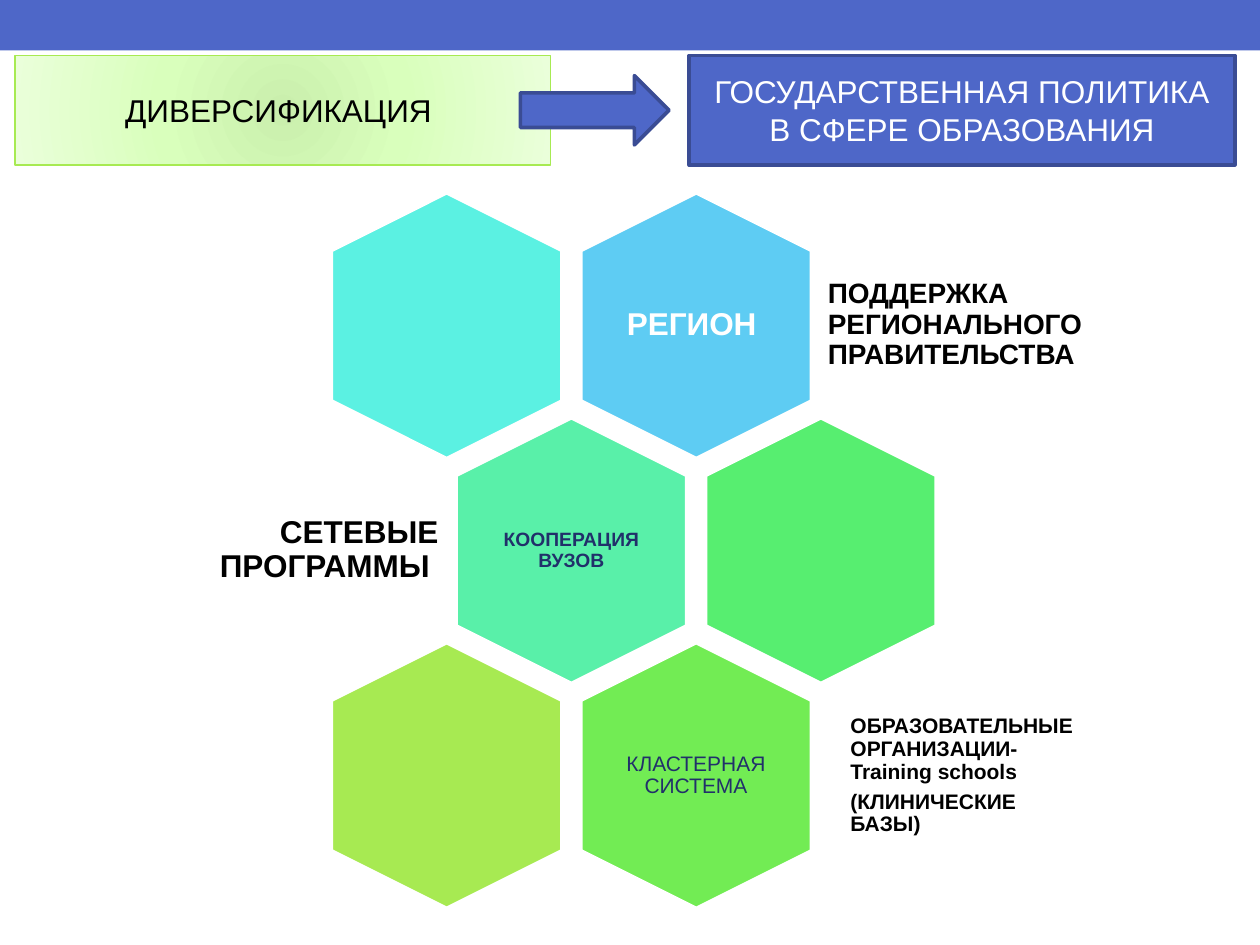
from dataclasses import dataclass
from typing import Optional

from lxml.etree import SubElement
from pptx import Presentation
from pptx.dml.color import RGBColor
from pptx.enum.shapes import MSO_SHAPE
from pptx.enum.text import MSO_ANCHOR, PP_ALIGN
from pptx.oxml.ns import qn
from pptx.util import Inches, Pt


@dataclass(frozen=True)
class Theme:
    font: str = "Arial"
    blue: str = "4E67C8"
    blue_edge: str = "3A4C94"
    lime: str = "A7EA52"
    navy: str = "21306A"
    black: str = "000000"
    white: str = "FFFFFF"
    title: float = 18
    support: float = 16
    body: float = 12
    small: float = 11
    edge: float = 2.08
    thin_edge: float = 0.75
    glow: tuple = ((0, "CAEFAD"), (45, "D9FFBC"), (100, "EAFFDA"))


@dataclass(frozen=True)
class Box:
    left: float
    top: float
    width: float
    height: float

    def lengths(self) -> tuple:
        return tuple(Inches(v) for v in (self.left, self.top, self.width, self.height))


@dataclass(frozen=True)
class Style:
    size: float
    color: str
    bold: bool = False
    align: PP_ALIGN = PP_ALIGN.CENTER
    inset: float = 0.07


@dataclass(frozen=True)
class Label:
    box: Box
    paragraphs: tuple
    style: Style


@dataclass(frozen=True)
class Cell:
    """A hexagon on the honeycomb; column may be a half step."""
    column: float
    row: int
    color: str
    text: str = ""
    style: Optional[Style] = None


THEME = Theme()
HEX_LENGTH, HEX_BREADTH = 2.11, 1.83
COMB_LEFT, COMB_TOP = 2.49, 1.67
COLUMN_STEP, ROW_STEP = 1.98, 3.57 / 2
CAPTION_WIDTH, CAPTION_HEIGHT = 1.26, 1.45

CELLS = (
    Cell(1, 0, "5ECCF3", "РЕГИОН ", Style(THEME.title, THEME.white, True)),
    Cell(0, 0, "5BF1E2"),
    Cell(0.5, 1, "59F0A9", "КООПЕРАЦИЯ ВУЗОВ", Style(THEME.small, THEME.navy, True, inset=0.05)),
    Cell(1.5, 1, "57EE70"),
    Cell(1, 2, "72EC54", "КЛАСТЕРНАЯ СИСТЕМА", Style(THEME.body, THEME.navy, inset=0.05)),
    Cell(0, 2, THEME.lime),
)

SIDE_LABELS = (
    Label(Box(6.5, 1.95, 2.35, 1.26), ("ПОДДЕРЖКА РЕГИОНАЛЬНОГО ПРАВИТЕЛЬСТВА",),
          Style(THEME.support, THEME.black, True, PP_ALIGN.LEFT)),
    Label(Box(1.27, 3.74, 2.28, 1.26), ("СЕТЕВЫЕ ПРОГРАММЫ ",),
          Style(THEME.title, THEME.black, True, PP_ALIGN.RIGHT)),
    Label(Box(6.7, 5.34, 1.96, 1.64),
          ("ОБРАЗОВАТЕЛЬНЫЕ ОРГАНИЗАЦИИ- Training schools", "(КЛИНИЧЕСКИЕ БАЗЫ)"),
          Style(THEME.body, THEME.black, True, PP_ALIGN.JUSTIFY, 0.05)),
)


def format_paragraph(paragraph, style: Style) -> None:
    paragraph.alignment = style.align
    for run in paragraph.runs:
        run.font.name = THEME.font
        run.font.size = Pt(style.size)
        run.font.bold = style.bold
        run.font.color.rgb = RGBColor.from_string(style.color)


def add_filled(slide, preset: MSO_SHAPE, box: Box, fill: str,
               edge: Optional[str] = None, edge_width: float = THEME.edge):
    shape = slide.shapes.add_shape(preset, *box.lengths())
    shape.shadow.inherit = False
    shape.fill.solid()
    shape.fill.fore_color.rgb = RGBColor.from_string(fill)
    if edge:
        shape.line.color.rgb = RGBColor.from_string(edge)
        shape.line.width = Pt(edge_width)
    else:
        shape.line.fill.background()
    return shape


def set_heading(shape, text: str, color: str) -> None:
    frame = shape.text_frame
    frame.text = text
    frame.word_wrap = True
    frame.vertical_anchor = MSO_ANCHOR.MIDDLE
    format_paragraph(frame.paragraphs[0], Style(THEME.title, color))


def apply_glow(shape) -> None:
    """Replace the fill with a circular gradient spreading from the centre."""
    shape.fill.gradient()
    gradient = shape.fill._xPr.find(qn("a:gradFill"))
    for child in list(gradient):
        gradient.remove(child)
    stops = SubElement(gradient, qn("a:gsLst"))
    for position, color in THEME.glow:
        stop = SubElement(stops, qn("a:gs"), pos=str(position * 1000))
        SubElement(stop, qn("a:srgbClr"), val=color)
    circle = SubElement(gradient, qn("a:path"), path="circle")
    SubElement(circle, qn("a:fillToRect"), {side: "100000" for side in "ltrb"})


def add_label(slide, label: Label) -> None:
    style = label.style
    frame = slide.shapes.add_textbox(*label.box.lengths()).text_frame
    frame.word_wrap = True
    frame.vertical_anchor = MSO_ANCHOR.MIDDLE
    frame.margin_left = frame.margin_right = Inches(style.inset)
    frame.margin_top = frame.margin_bottom = Inches(style.inset)
    frame.text = "\n".join(label.paragraphs)
    for paragraph in frame.paragraphs:
        format_paragraph(paragraph, style)
        paragraph.line_spacing = 0.9
        paragraph.space_after = Pt(style.size * 0.35)


def add_cell(slide, cell: Cell) -> None:
    box = Box(COMB_LEFT + cell.column * COLUMN_STEP, COMB_TOP + cell.row * ROW_STEP,
              HEX_LENGTH, HEX_BREADTH)
    hexagon = add_filled(slide, MSO_SHAPE.HEXAGON, box, cell.color, THEME.white)
    hexagon.adjustments[0] = 0.25
    hexagon.adjustments[1] = 1.1547
    hexagon.rotation = 90
    if cell.style:
        caption = Box(box.left + (HEX_LENGTH - CAPTION_WIDTH) / 2,
                      box.top + (HEX_BREADTH - CAPTION_HEIGHT) / 2,
                      CAPTION_WIDTH, CAPTION_HEIGHT)
        add_label(slide, Label(caption, (cell.text,), cell.style))


def add_header(slide) -> None:
    add_filled(slide, MSO_SHAPE.RECTANGLE, Box(0, 0, 10, 0.4), THEME.blue)
    diversification = add_filled(slide, MSO_SHAPE.RECTANGLE, Box(0.12, 0.44, 4.25, 0.87),
                                 THEME.white, THEME.lime, THEME.thin_edge)
    apply_glow(diversification)
    set_heading(diversification, "ДИВЕРСИФИКАЦИЯ ", THEME.black)
    add_filled(slide, MSO_SHAPE.RIGHT_ARROW, Box(4.13, 0.6, 1.18, 0.55),
               THEME.blue, THEME.blue_edge)
    policy = add_filled(slide, MSO_SHAPE.RECTANGLE, Box(5.47, 0.44, 4.33, 0.87),
                        THEME.blue, THEME.blue_edge)
    set_heading(policy, "ГОСУДАРСТВЕННАЯ ПОЛИТИКА В СФЕРЕ ОБРАЗОВАНИЯ", THEME.white)


def main() -> None:
    presentation = Presentation()
    presentation.slide_width, presentation.slide_height = Inches(10), Inches(7.5)
    slide = presentation.slides.add_slide(presentation.slide_layouts[6])
    add_header(slide)
    for cell in CELLS:
        add_cell(slide, cell)
    for label in SIDE_LABELS:
        add_label(slide, label)
    presentation.save("out.pptx")


if __name__ == "__main__":
    main()
